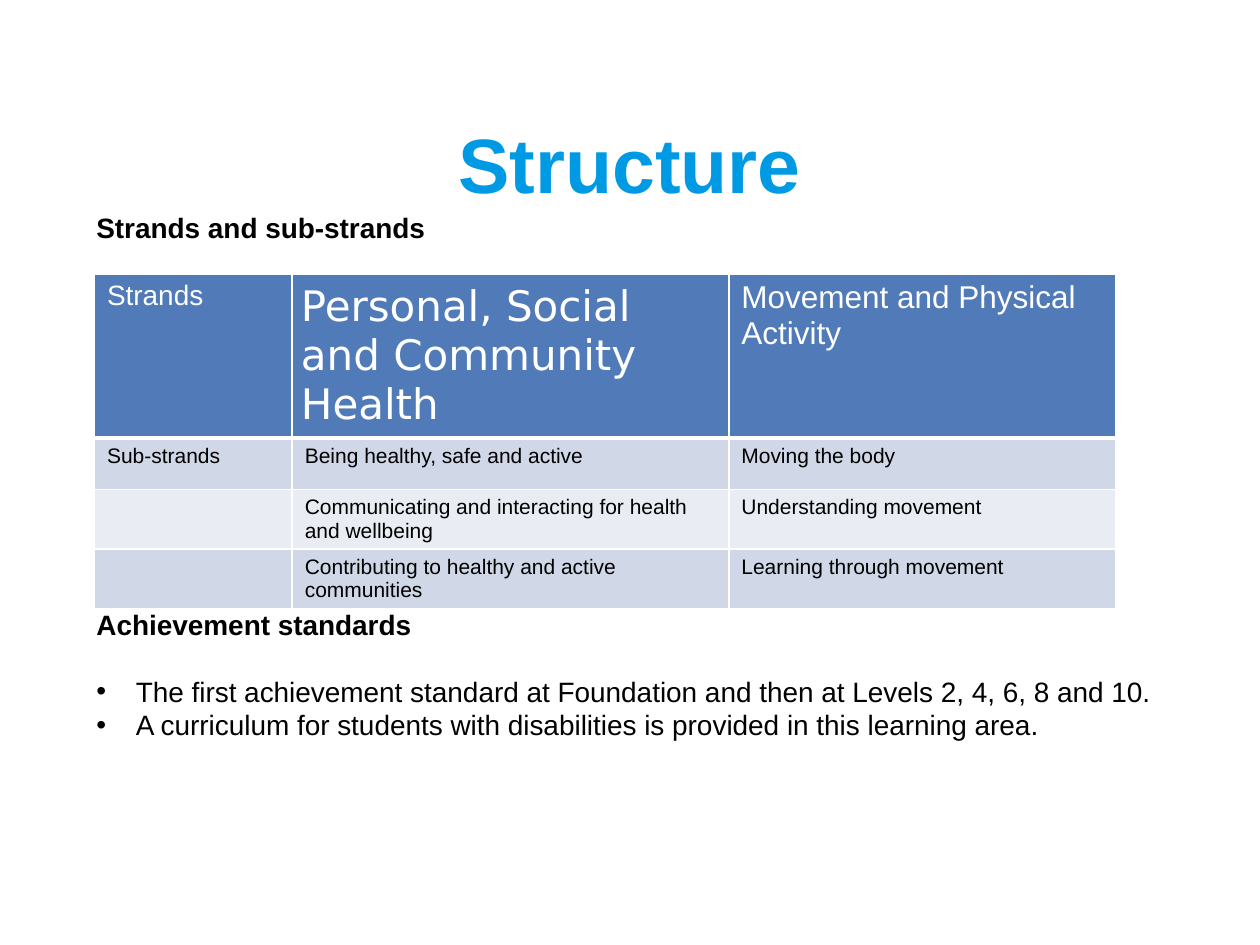
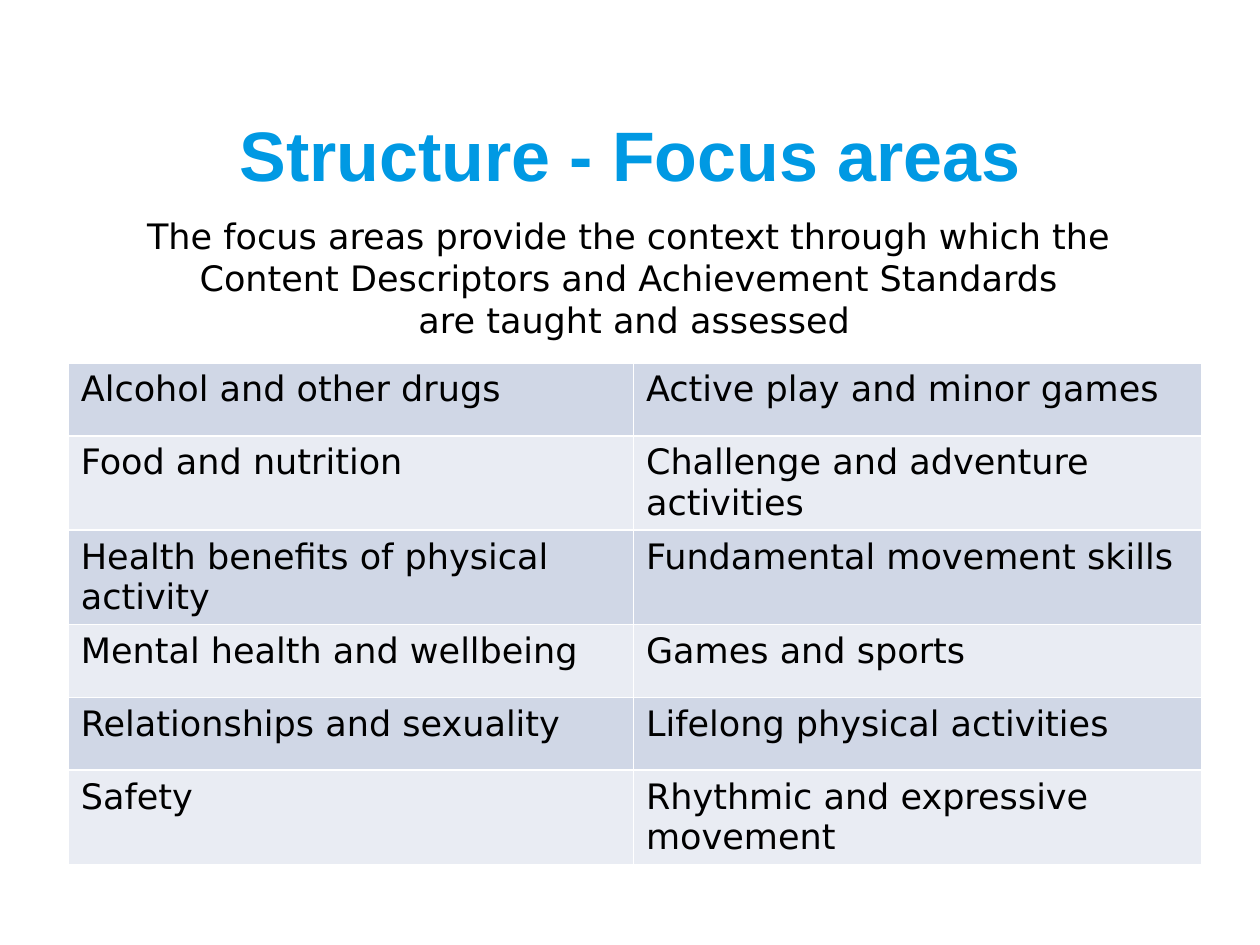
import pptx
import pptx.dml.color
import pptx.enum.text
import pptx.oxml
import pptx.oxml.ns
import pptx.util

Pt = pptx.util.Pt
ALIGN = pptx.enum.text.PP_ALIGN
TITLE_BLUE = "0099E3"
HEADER_BLUE = "517AB8"
BANDS = ("D0D7E6", "E9ECF3")
WHITE = "FFFFFF"
BLACK = "000000"
SANS = "Arial"
WIDE_SANS = "DejaVu Sans"


def color(hex_string):
    return pptx.dml.color.RGBColor.from_string(hex_string)


def format_paragraph(paragraph, size, font, fill=BLACK, bold=False, align=ALIGN.LEFT):
    paragraph.alignment = align
    paragraph.font.size = Pt(size)
    paragraph.font.name = font
    paragraph.font.bold = bold
    paragraph.font.color.rgb = color(fill)


def add_titled_slide(presentation, text, size, height):
    slide = presentation.slides.add_slide(presentation.slide_layouts[5])
    title = slide.shapes.title
    title.left, title.top, title.width, title.height = Pt(54), Pt(48), Pt(612), Pt(height)
    frame = title.text_frame
    frame.text = text
    frame.auto_size = pptx.enum.text.MSO_AUTO_SIZE.NONE
    frame.vertical_anchor = pptx.enum.text.MSO_ANCHOR.MIDDLE
    format_paragraph(frame.paragraphs[0], size, SANS, TITLE_BLUE, True, ALIGN.CENTER)
    return slide


def add_text(slide, box, lines):
    frame = slide.shapes.add_textbox(*map(Pt, box)).text_frame
    frame.word_wrap = True
    frame.text = "\n".join(lines)
    return frame.paragraphs


def add_bullet(paragraph, indent):
    properties = paragraph._p.get_or_add_pPr()
    properties.set("marL", str(Pt(indent)))
    properties.set("indent", str(-Pt(indent)))
    namespace = pptx.oxml.ns.nsdecls("a")
    properties.append(pptx.oxml.parse_xml(f'<a:buFont {namespace} typeface="Arial"/>'))
    properties.append(pptx.oxml.parse_xml(f'<a:buChar {namespace} char="•"/>'))


def set_borders(cell, top=1, bottom=1):
    properties = cell._tc.get_or_add_tcPr()
    widths = {"L": 1, "R": 1, "T": top, "B": bottom}
    for position, (side, width) in enumerate(widths.items()):
        properties.insert(position, pptx.oxml.parse_xml(
            f'<a:ln{side} {pptx.oxml.ns.nsdecls("a")} w="{Pt(width)}">'
            f'<a:solidFill><a:srgbClr val="{WHITE}"/></a:solidFill></a:ln{side}>'))


def add_banded_table(slide, left, top, widths, row_height, rows, size, font, header_styles=()):
    shape = slide.shapes.add_table(len(rows), len(widths), Pt(left), Pt(top),
                                   Pt(sum(widths)), Pt(row_height * len(rows)))
    table = shape.table
    header_count = 1 if header_styles else 0
    table.first_row = bool(header_styles)
    for column, width in zip(table.columns, widths):
        column.width = Pt(width)
    for row_index, texts in enumerate(rows):
        table.rows[row_index].height = Pt(row_height)
        is_header = row_index < header_count
        for column_index, text in enumerate(texts):
            cell = table.cell(row_index, column_index)
            set_borders(cell, 3 if header_count and row_index == 1 else 1, 3 if is_header else 1)
            cell.fill.solid()
            fill = HEADER_BLUE if is_header else BANDS[(row_index - header_count) % 2]
            cell.fill.fore_color.rgb = color(fill)
            if not text:
                continue
            cell.text = text
            paragraph = cell.text_frame.paragraphs[0]
            if is_header:
                format_paragraph(paragraph, *header_styles[column_index], WHITE)
            else:
                format_paragraph(paragraph, size, font)
    return table


def add_achievement_standards(slide, box):
    heading, *bullets = add_text(slide, box, [
        "Achievement standards",
        "The first achievement standard at Foundation and then at Levels 2, 4, 6, 8 and 10.",
        "A curriculum for students with disabilities is provided in this learning area.",
    ])
    format_paragraph(heading, 16, SANS, bold=True)
    heading.space_after = Pt(19)
    for bullet in bullets:
        add_bullet(bullet, 22.5)
        format_paragraph(bullet, 16, SANS)


def build_structure(presentation):
    slide = add_titled_slide(presentation, "Structure", 44, 90)
    rows = [
        ("Strands", "Personal, Social and Community Health", "Movement and Physical Activity"),
        ("Sub-strands", "Being healthy, safe and active", "Moving the body"),
        ("", "Communicating and interacting for health and wellbeing", "Understanding movement"),
        ("", "Contributing to healthy and active communities", "Learning through movement"),
    ]
    table = add_banded_table(slide, 54, 156.5, (113, 249.5, 221), 29.3, rows, 12, SANS,
                             ((16, SANS), (24, WIDE_SANS), (18, SANS)))
    health = table.cell(0, 1)
    health.margin_left = health.margin_top = health.margin_right = health.margin_bottom = Pt(5)
    add_achievement_standards(slide, (48, 343.5, 641, 85))
    subtitle = add_text(slide, (48, 116.5, 618, 26.5), ["Strands and sub-strands"])
    format_paragraph(subtitle[0], 16, SANS, bold=True)


def build_focus_areas(presentation):
    slide = add_titled_slide(presentation, "Structure - Focus areas", 40, 80)
    rows = [
        ("Alcohol and other drugs", "Active play and minor games"),
        ("Food and nutrition", "Challenge and adventure activities"),
        ("Health benefits of physical activity", "Fundamental movement skills"),
        ("Mental health and wellbeing", "Games and sports"),
        ("Relationships and sexuality", "Lifelong physical activities"),
        ("Safety", "Rhythmic and expressive movement"),
    ]
    add_banded_table(slide, 39, 207.5, (323, 324.5), 41.7, rows, 20, WIDE_SANS)
    introduction = add_text(slide, (25, 119, 675, 80), [
        "The focus areas provide the context through which the ",
        "Content Descriptors and Achievement Standards ",
        "are taught and assessed",
    ])
    for paragraph in introduction:
        format_paragraph(paragraph, 20, WIDE_SANS, align=ALIGN.CENTER)


def main():
    presentation = pptx.Presentation()
    presentation.slide_width, presentation.slide_height = Pt(720), Pt(540)
    build_structure(presentation)
    build_focus_areas(presentation)
    presentation.save("out.pptx")


if __name__ == "__main__":
    main()
